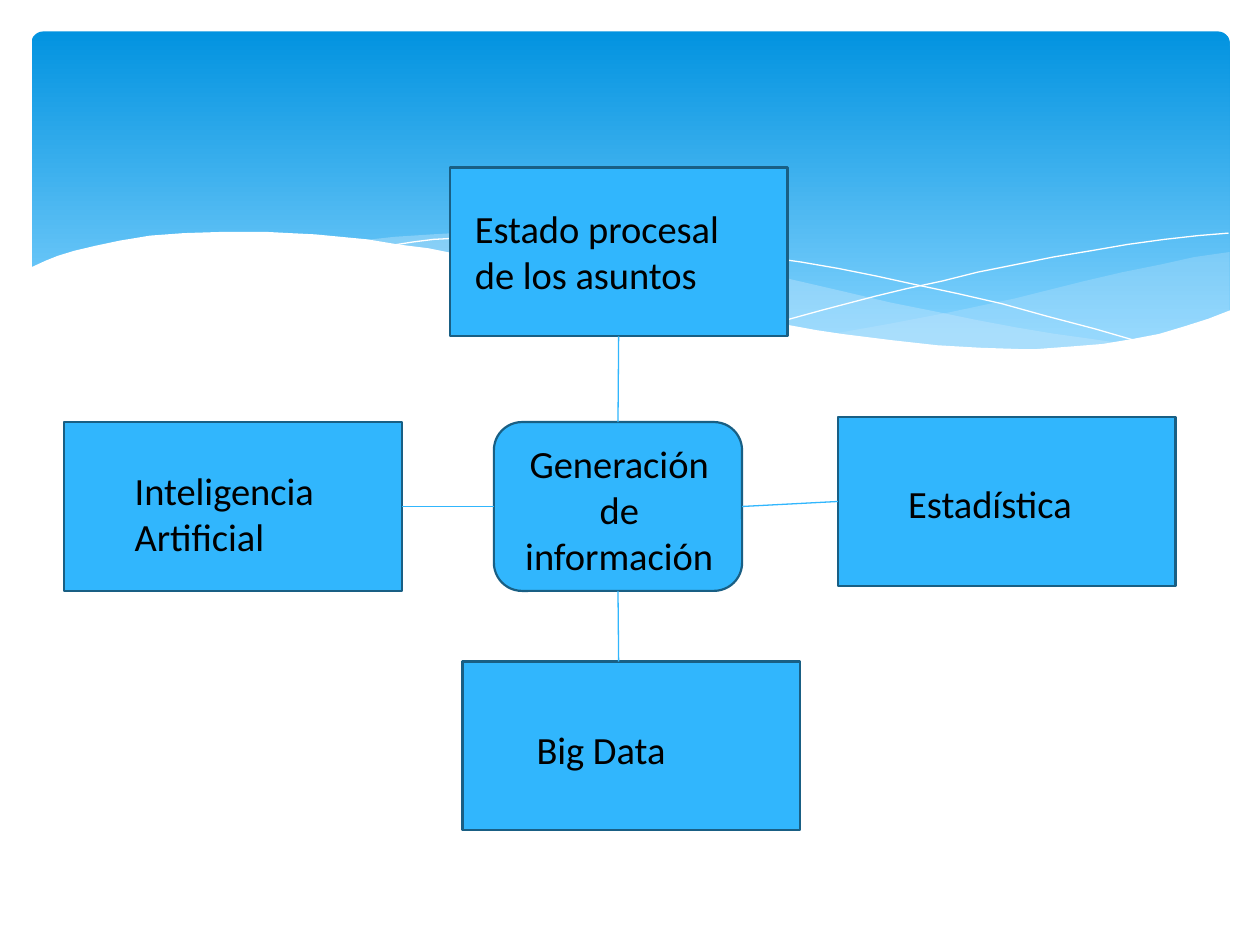
from lxml import etree
from pptx import Presentation, util as u
from pptx.dml.color import RGBColor
from pptx.enum import shapes, text
from pptx.oxml.ns import qn

BLUE, NAVY, PALE, WHITE = "31B6FD", "195F84", "C6E7FC", "FFFFFF"
BOX_WIDTH, BOX_HEIGHT = 2.68, 1.34
TOP, RIGHT, BOTTOM, LEFT = 0, 3, 2, 1

RIGHT_SWELL = [
    (9.76, 2), (9.48, 2.04), (9.21, 2.1), (8.91, 2.16), (8.61, 2.23), (8.05, 2.37),
    (7.53, 2.48), (7.06, 2.57), (6.61, 2.65), (6.91, 2.69), (7.19, 2.72), (7.45, 2.75),
    (7.69, 2.77), (8.03, 2.78), (8.35, 2.77), (8.63, 2.75), (8.89, 2.72), (9.13, 2.67),
    (9.35, 2.62), (9.49, 2.57), (9.63, 2.52), (9.76, 2.47)]
LONG_SWELL = [
    (8.93, 2.73), (8.66, 2.69), (8.37, 2.65), (8.07, 2.6), (7.75, 2.54), (7.41, 2.47),
    (7.06, 2.4), (6.68, 2.31), (6.29, 2.22), (5.98, 2.14), (5.69, 2.08), (5.41, 2.03),
    (5.14, 1.98), (4.89, 1.94), (4.65, 1.91), (4.42, 1.89), (4.2, 1.87), (3.99, 1.86),
    (3.8, 1.85), (3.61, 1.85), (3.44, 1.86), (3.13, 1.88), (2.86, 1.91), (3.23, 1.96),
    (3.62, 2.03), (4.04, 2.11), (4.49, 2.22), (4.91, 2.32), (5.3, 2.4), (5.66, 2.48),
    (6.01, 2.55), (6.34, 2.61), (6.65, 2.66), (6.95, 2.7), (7.22, 2.74), (7.48, 2.76),
    (7.73, 2.77), (7.96, 2.78), (8.28, 2.78), (8.57, 2.77), (8.76, 2.75)]
FALLING_LINE = [
    (3.09, 1.95), (3.28, 1.92), (3.44, 1.9), (3.63, 1.89), (3.87, 1.87), (4.16, 1.87),
    (4.5, 1.88), (4.89, 1.9), (5.33, 1.94), (5.56, 1.97), (5.82, 2), (6.08, 2.04),
    (6.36, 2.08), (6.65, 2.13), (6.95, 2.19), (7.27, 2.26), (7.6, 2.33), (7.95, 2.41),
    (8.31, 2.51), (8.69, 2.61), (9.07, 2.72)]
RISING_LINE = [
    (6.13, 2.57), (6.53, 2.46), (6.95, 2.35), (7.2, 2.29), (7.48, 2.23), (7.76, 2.16),
    (8.06, 2.1), (8.36, 2.04), (8.66, 1.99), (8.95, 1.94), (9.24, 1.9), (9.51, 1.87),
    (9.75, 1.85)]
WHITE_WAVE = [
    (9.77, 2.46), (9.59, 2.53), (9.4, 2.59), (9.2, 2.65), (8.99, 2.69), (8.75, 2.73),
    (8.5, 2.75), (8.23, 2.77), (8.09, 2.77), (7.78, 2.76), (7.44, 2.74), (7.08, 2.7),
    (6.68, 2.65), (6.48, 2.62), (6.26, 2.58), (6.03, 2.54), (5.79, 2.5), (5.55, 2.45),
    (5.29, 2.39), (5.03, 2.33), (4.75, 2.27), (4.47, 2.2), (4.18, 2.13), (3.91, 2.07),
    (3.65, 2.02), (3.4, 1.97), (3.16, 1.94), (2.92, 1.9), (2.71, 1.88), (2.5, 1.86),
    (2.3, 1.85), (2.11, 1.84), (1.77, 1.84), (1.46, 1.85), (1.19, 1.87), (0.95, 1.91),
    (0.76, 1.95), (0.59, 1.99), (0.46, 2.03), (0.36, 2.07), (0.23, 2.13),
    (0.23, 3.29), (9.77, 3.29)]


def color(hex_string):
    return RGBColor.from_string(hex_string)


def style(shape, fill=None, line=None, width=0.0, opacity=100):
    """Set fill and outline; None leaves that part empty."""
    shape.shadow.inherit = False
    if fill:
        shape.fill.solid()
        shape.fill.fore_color.rgb = color(fill)
        if opacity < 100:
            fill_color = shape.fill._xPr.find(qn("a:solidFill"))[0]
            etree.SubElement(fill_color, qn("a:alpha"), val=str(opacity * 1000))
    else:
        shape.fill.background()
    if line:
        shape.line.color.rgb = color(line)
        shape.line.width = u.Pt(width)
    else:
        shape.line.fill.background()


def add_banner(slide):
    banner = slide.shapes.add_shape(
        shapes.MSO_SHAPE.ROUNDED_RECTANGLE, *map(u.Inches, (0.25, 0.25, 9.51, 2.7)))
    banner.adjustments[0] = 0.034
    style(banner)
    banner.fill.gradient()
    banner.fill.gradient_angle = 270
    stops = zip(banner.fill.gradient_stops, (0, 0.9), ("0293E0", "83D3FE"))
    for stop, position, hex_string in stops:
        stop.position = position
        stop.color.rgb = color(hex_string)


def add_wave(slide, points, **look):
    """Draw a filled wave as a closed outline, or an unfilled one as an open line."""
    start, *rest = [(u.Inches(x), u.Inches(y)) for x, y in points]
    builder = slide.shapes.build_freeform(*start)
    builder.add_line_segments(rest, close="fill" in look)
    style(builder.convert_to_shape(), **look)


def add_box(slide, left, top, width=BOX_WIDTH, kind=shapes.MSO_SHAPE.RECTANGLE):
    box = slide.shapes.add_shape(kind, *map(u.Inches, (left, top, width, BOX_HEIGHT)))
    style(box, fill=BLUE, line=NAVY, width=1.25)
    return box


def add_text(slide, words, left, top, width, height, size=22, font="Calibri",
             hex_string="000000", align=text.PP_ALIGN.LEFT):
    frame = slide.shapes.add_textbox(*map(u.Inches, (left, top, width, height))).text_frame
    frame.word_wrap = True
    paragraph = frame.paragraphs[0]
    paragraph.alignment = align
    run = paragraph.add_run()
    run.text = words
    run.font.size, run.font.name = u.Pt(size), font
    run.font.color.rgb = color(hex_string)


def add_link(slide, begin, end):
    """Join two (box, side) ends; an end may also be an (x, y) point in inches."""
    link = slide.shapes.add_connector(shapes.MSO_CONNECTOR.STRAIGHT, 0, 0, 0, 0)
    link.begin_connect(*begin)
    if isinstance(end[0], float):
        link.end_x, link.end_y = map(u.Inches, end)
    else:
        link.end_connect(*end)
    link.line.color.rgb = color(BLUE)
    link.line.width = u.Pt(0.75)
    etree.SubElement(link._element.spPr, qn("a:effectLst"))


def main():
    presentation = Presentation()
    presentation.slide_width, presentation.slide_height = u.Inches(10), u.Inches(7.5)
    slide = presentation.slides.add_slide(presentation.slide_layouts[6])

    add_banner(slide)
    add_wave(slide, RIGHT_SWELL, fill=PALE, opacity=29)
    add_wave(slide, LONG_SWELL, fill=PALE, opacity=40)
    add_wave(slide, FALLING_LINE, line=WHITE)
    add_wave(slide, RISING_LINE, line=WHITE)
    add_wave(slide, WHITE_WAVE, fill=WHITE)

    intelligence = add_box(slide, 0.51, 3.35)
    status = add_box(slide, 3.57, 1.33)
    statistics = add_box(slide, 6.65, 3.31)
    add_box(slide, 3.67, 5.25)
    center = add_box(slide, 3.92, 3.35, 1.97, shapes.MSO_SHAPE.ROUNDED_RECTANGLE)

    add_text(slide, "Estado procesal de los asuntos", 3.67, 1.58, 2.49, 0.84)
    add_text(slide, "Inteligencia Artificial", 0.97, 3.66, 1.98, 0.84)
    add_text(slide, "Generación de información", 4, 3.44, 1.83, 1.21,
             align=text.PP_ALIGN.CENTER)
    add_text(slide, "Estadística", 7.11, 3.76, 1.77, 0.47)
    add_text(slide, "Big Data", 4.16, 5.71, 1.65, 0.47)

    add_link(slide, (intelligence, RIGHT), (center, LEFT))
    add_link(slide, (status, BOTTOM), (center, TOP))
    add_link(slide, (center, RIGHT), (statistics, LEFT))
    add_link(slide, (center, BOTTOM), (4.91, 5.25))

    presentation.save("out.pptx")


if __name__ == "__main__":
    main()
